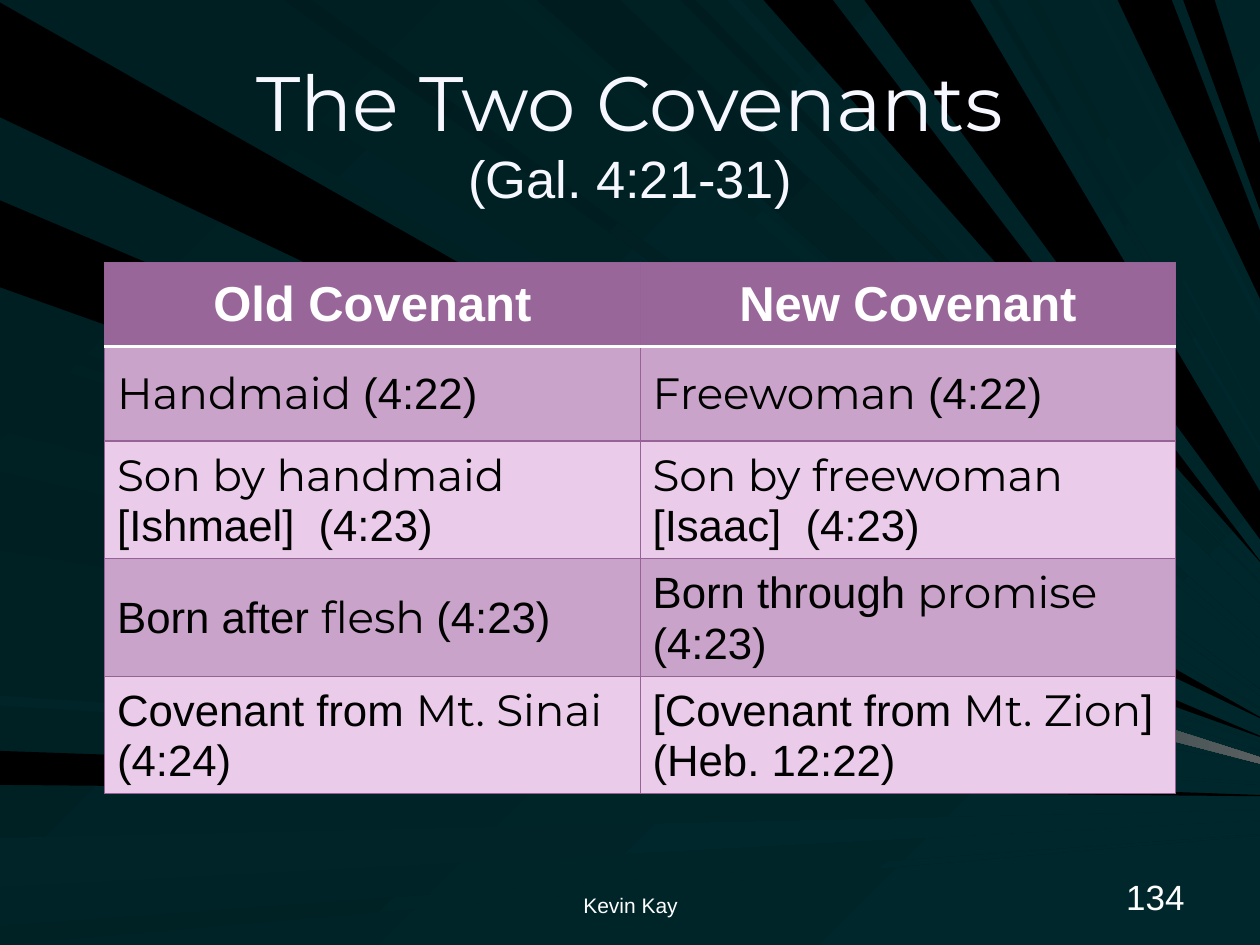
from lxml import etree
from pptx import Presentation
from pptx.dml.color import RGBColor
from pptx.enum.text import MSO_ANCHOR, PP_ALIGN
from pptx.oxml.ns import qn
from pptx.util import Pt

LEFT, CENTER, RIGHT = PP_ALIGN.LEFT, PP_ALIGN.CENTER, PP_ALIGN.RIGHT
MIDDLE, BOTTOM = MSO_ANCHOR.MIDDLE, MSO_ANCHOR.BOTTOM
PX = 9144  # 100 px to the inch
W, H = 1000, 750
SANS, ACCENT = "Arial", "Montserrat"

C = {
    "black": "000000", "teal": "00272B", "base": "001F22", "deep": "001C1F",
    "dim": "001F23", "mid": "002225", "soft": "002428", "grey": "5A5F60",
    "title": "F7F7FF", "white": "FFFFFF", "header": "996699",
    "dark": "C9A3C9", "light": "EBCBEA", "border": "976397",
}

# Rays run to the right edge: (side, colour, start from, start to, end from, end to)
RAYS = [
    ("left", "black", 2, 93, 569, 570),
    ("top", "dim", 26, 101, 562, 563),
    ("left", "black", 596, 623, 631, 632),
    ("left", "soft", 665, 704, 643, 651),
    ("left", "mid", 735, 750, 662, 663),
    ("left", "dim", 258, 270, 588, 589),
    ("left", "black", 159, 228, 584, 585),
    ("top", "mid", 398, 416, 515, 521),
    ("top", "deep", 426, 492, 479, 507),
    ("top", "deep", 540, 552, 462, 463),
    ("top", "black", 606, 661, 445, 446),
    ("top", "black", 887, 930, 183, 237),
    ("top", "black", 939, 964, 114, 167),
    ("left", "dim", 278, 342, 596, 602),
    ("left", "dim", 374, 437, 605, 606),
    ("left", "soft", 552, 560, 621, 623),
    ("top", "deep", 225, 247, 547, 552),
    ("top", "soft", 577, 588, 453, 454),
    ("top", "black", 686, 770, 390, 428),
    ("top", "dim", 785, 792, 354, 360),
    ("top", "mid", 815, 824, 335, 336),
    ("top", "soft", 865, 872, 249, 258),
]
GLOW = [(637, 485), (W, 601), (W, 606), (633, 511)]

# Texts are lines of (words, font, size) runs
TEXTS = [
    ((50, 42, 900, 125), CENTER, MIDDLE, "title",
     [[("The Two Covenants", ACCENT, 44)], [("(Gal. 4:21-31)", SANS, 30)]]),
    ((717, 683, 233, 50), RIGHT, BOTTOM, "white", [[("134", SANS, 20)]]),
    ((342, 683, 317, 50), CENTER, BOTTOM, "white", [[("Kevin Kay", SANS, 12)]]),
]

HEADINGS = ["Old Covenant", "New Covenant"]
# Words between asterisks take the accent font
ROWS = [
    ["*Handmaid* (4:22)", "*Freewoman* (4:22)"],
    ["*Son by handmaid *[Ishmael]  (4:23)", "*Son by freewoman *[Isaac]  (4:23)"],
    ["Born after *flesh *(4:23)", "Born through *promise* (4:23)"],
    ["Covenant from *Mt. Sinai *(4:24)", "[Covenant from *Mt. Zion*] (Heb. 12:22)"],
]
TABLE_X, TABLE_Y, COL_W = 83, 208, 425
ROW_H = [67, 75, 91, 93, 93]


def rgb(name):
    return RGBColor.from_string(C[name])


def paint(fill, start, end=None, angle=0):
    if end is None:
        fill.solid()
        fill.fore_color.rgb = rgb(start)
        return
    fill.gradient()
    fill.gradient_angle = angle
    for stop, name, position in zip(fill.gradient_stops, (start, end), (0, 1)):
        stop.color.rgb = rgb(name)
        stop.position = position


def add_ray(points, *look):
    builder = s.shapes.build_freeform(*points[0], scale=PX)
    builder.add_line_segments(points[1:], close=True)
    sp = builder.convert_to_shape()
    sp.shadow.inherit = False
    sp.line.fill.background()
    paint(sp.fill, *look)


def write(tf, lines, color, align=LEFT, bold=False):
    p = tf.paragraphs[0]
    p.alignment = align
    for i, line in enumerate(lines):
        if i:
            p.add_line_break()
        for words, font, size in line:
            r = p.add_run()
            r.text = words
            r.font.name, r.font.size, r.font.bold = font, Pt(size), bold
            r.font.color.rgb = rgb(color)


def set_border(cell, side, color, width):
    ln = etree.SubElement(cell._tc.get_or_add_tcPr(), qn(f"a:ln{side}"), w=str(Pt(width)))
    fill = etree.SubElement(ln, qn("a:solidFill"))
    etree.SubElement(fill, qn("a:srgbClr"), val=C[color])


prs = Presentation()
prs.slide_width, prs.slide_height = W * PX, H * PX
s = prs.slides.add_slide(prs.slide_layouts[6])

# Background
paint(s.background.fill, "base", "teal", 315)
for side, color, a, b, c, d in RAYS:
    if side == "left":
        points = [(0, a), (W, c), (W, d), (0, b)]
    else:
        points = [(a, 0), (W, d), (W, c), (b, 0)]
    look = (color,) if color == "black" else (color, "teal", 315)
    add_ray(points, *look)
add_ray(GLOW, "teal", "grey")

# Title and footer
for box, align, anchor, color, lines in TEXTS:
    tf = s.shapes.add_textbox(*(v * PX for v in box)).text_frame
    tf.word_wrap = True
    tf.vertical_anchor = anchor
    write(tf, lines, color, align)

# Covenant table
table = s.shapes.add_table(len(ROW_H), len(HEADINGS), TABLE_X * PX, TABLE_Y * PX,
                           COL_W * len(HEADINGS) * PX, sum(ROW_H) * PX).table
for col in table.columns:
    col.width = COL_W * PX
for i, (height, texts) in enumerate(zip(ROW_H, [HEADINGS] + ROWS)):
    table.rows[i].height = height * PX
    for j, text in enumerate(texts):
        cell = table.cell(i, j)
        cell.vertical_anchor = MIDDLE
        for side in "LRTB":
            rule = (i == 0 and side == "B") or (i == 1 and side == "T")
            set_border(cell, side, *(("white", 2) if rule else ("border", 0.75)))
        if i == 0:
            paint(cell.fill, "header")
            write(cell.text_frame, [[(text, SANS, 28)]], "white", CENTER, bold=True)
        else:
            paint(cell.fill, "dark" if i % 2 else "light")
            runs = [(part, ACCENT if k % 2 else SANS, 25)
                    for k, part in enumerate(text.split("*")) if part]
            write(cell.text_frame, [runs], "black")

prs.save("out.pptx")
